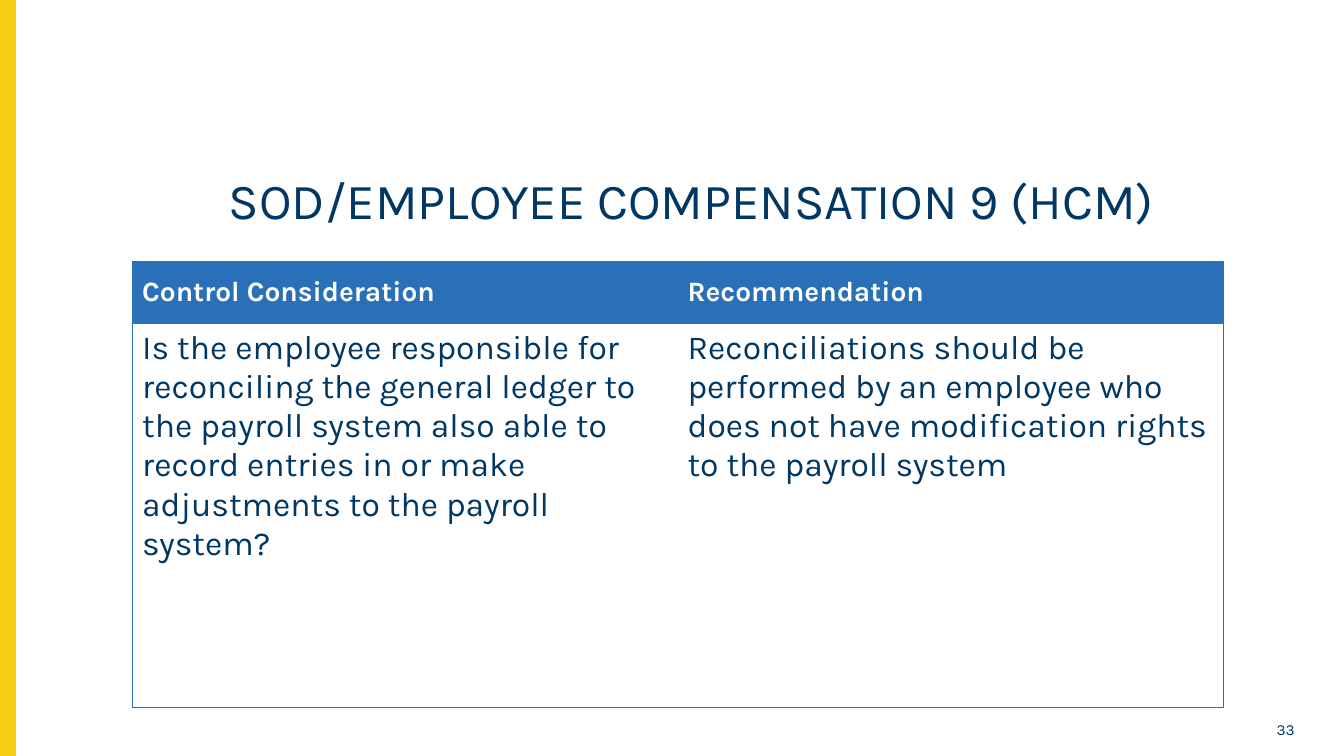
import dataclasses

import lxml.etree
import pptx
import pptx.dml.color
import pptx.enum.shapes
import pptx.enum.text
import pptx.oxml.ns
import pptx.util
from pptx.util import Inches


@dataclasses.dataclass(frozen=True)
class Theme:
    """Colours and type sizes of the slide."""
    font: str = "Karla"
    navy: str = "003764"
    blue: str = "2A70B8"
    yellow: str = "F4CE12"
    white: str = "FFFFFF"
    title_size: int = 36
    header_size: int = 20
    body_size: int = 24
    number_size: int = 11
    border_width: float = 0.5


THEME = Theme()
ALIGN = pptx.enum.text.PP_ALIGN
ANCHOR = pptx.enum.text.MSO_ANCHOR
COLUMNS = [
    ("Control Consideration",
     "Is the employee responsible for reconciling the general ledger to the payroll "
     "system also able to record entries in or make adjustments to the payroll system?"),
    ("Recommendation",
     "Reconciliations should be performed by an employee who does not have "
     "modification rights to the payroll system"),
]


def rgb(color):
    """Turn a hex string into a colour."""
    return pptx.dml.color.RGBColor.from_string(color)


def write(text_frame, text, size, color=THEME.navy, bold=False, align=ALIGN.LEFT):
    """Fill a text frame with one formatted paragraph."""
    text_frame.text = text
    text_frame.word_wrap = True
    paragraph = text_frame.paragraphs[0]
    paragraph.alignment = align
    font = paragraph.runs[0].font
    font.name = THEME.font
    font.size = pptx.util.Pt(size)
    font.bold = bold
    font.color.rgb = rgb(color)
    return paragraph


def add_side_bar(slide, left, top, width, height):
    """Draw the coloured bar along the slide edge."""
    bar = slide.shapes.add_shape(
        pptx.enum.shapes.MSO_SHAPE.RECTANGLE,
        Inches(left), Inches(top), Inches(width), Inches(height))
    bar.shadow.inherit = False
    bar.fill.solid()
    bar.fill.fore_color.rgb = rgb(THEME.yellow)
    bar.line.color.rgb = rgb(THEME.yellow)
    bar.line.width = pptx.util.Pt(1)


def add_label(slide, left, top, width, height, text, size, align):
    """Place a text box and return its paragraph."""
    box = slide.shapes.add_textbox(
        Inches(left), Inches(top), Inches(width), Inches(height))
    return write(box.text_frame, text, size, align=align)


def set_borders(cell, visible_sides):
    """Rule the named cell sides and clear the others."""
    properties = cell._tc.get_or_add_tcPr()
    for position, side in enumerate("LRTB"):
        line = lxml.etree.Element(pptx.oxml.ns.qn(f"a:ln{side}"))
        line.set("w", str(pptx.util.Pt(THEME.border_width)))
        if side in visible_sides:
            fill = lxml.etree.SubElement(line, pptx.oxml.ns.qn("a:solidFill"))
            lxml.etree.SubElement(fill, pptx.oxml.ns.qn("a:srgbClr"), val=THEME.blue)
        else:
            lxml.etree.SubElement(line, pptx.oxml.ns.qn("a:noFill"))
        properties.insert(position, line)


def add_control_table(slide, left, top, width, header_height, body_height):
    """Build the two-column table of controls and recommendations."""
    frame = slide.shapes.add_table(
        2, len(COLUMNS), Inches(left), Inches(top),
        Inches(width), Inches(header_height + body_height))
    table = frame.table
    table.horz_banding = False
    table.rows[0].height = Inches(header_height)
    table.rows[1].height = Inches(body_height)
    for index, (heading, body) in enumerate(COLUMNS):
        table.columns[index].width = Inches(width / len(COLUMNS))
        outer_side = "L" if index == 0 else "R"

        header_cell = table.cell(0, index)
        write(header_cell.text_frame, heading, THEME.header_size, THEME.white, bold=True)
        header_cell.vertical_anchor = ANCHOR.MIDDLE
        header_cell.fill.solid()
        header_cell.fill.fore_color.rgb = rgb(THEME.blue)
        set_borders(header_cell, outer_side + "T")

        body_cell = table.cell(1, index)
        write(body_cell.text_frame, body, THEME.body_size)
        body_cell.vertical_anchor = ANCHOR.TOP
        body_cell.fill.background()
        set_borders(body_cell, outer_side + "TB")


def main():
    """Build and save the slide."""
    presentation = pptx.Presentation()
    presentation.slide_width = Inches(13.33)
    presentation.slide_height = Inches(7.5)
    slide = presentation.slides.add_slide(presentation.slide_layouts[6])
    add_side_bar(slide, 0, 0, 0.15, 7.5)
    add_control_table(slide, 1.31, 2.59, 10.82, 0.62, 3.81)
    title = add_label(slide, 0.78, 1.7, 12.16, 0.87,
                      "SOD/EMPLOYEE COMPENSATION 9 (HCM)", THEME.title_size, ALIGN.CENTER)
    title.line_spacing = 0.9
    add_label(slide, 12.26, 7.09, 0.68, 0.26, "33", THEME.number_size, ALIGN.RIGHT)
    presentation.save("out.pptx")


if __name__ == "__main__":
    main()
